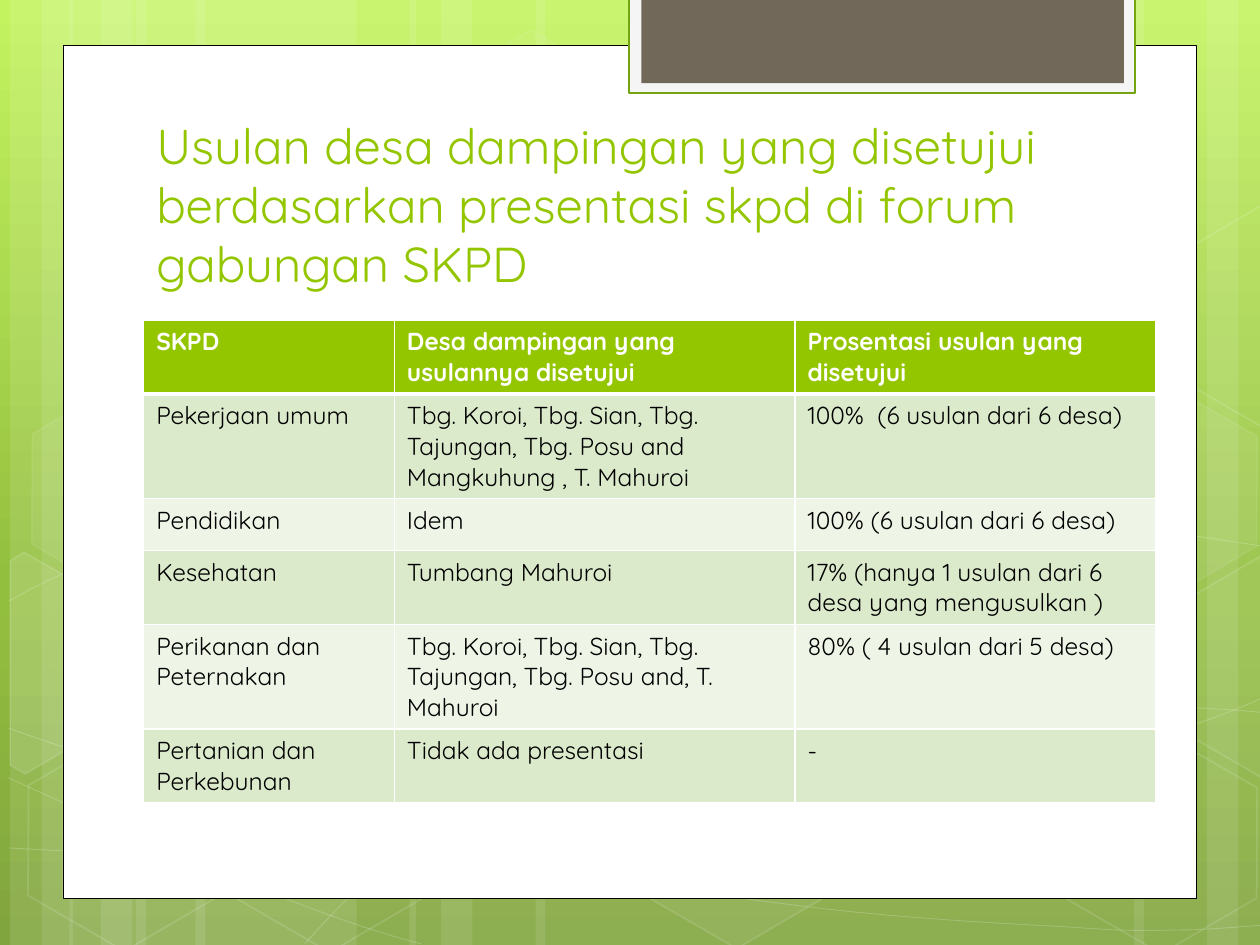
from math import cos, radians, sin
from lxml import etree
from pptx import Presentation
from pptx.dml.color import RGBColor
from pptx.enum.shapes import MSO_SHAPE
from pptx.enum.text import MSO_ANCHOR, MSO_AUTO_SIZE, PP_ALIGN
from pptx.oxml.ns import qn
from pptx.util import Inches, Pt

RECT, HEX = MSO_SHAPE.RECTANGLE, MSO_SHAPE.HEXAGON
LEFT, BOTTOM, FIXED = PP_ALIGN.LEFT, MSO_ANCHOR.BOTTOM, MSO_AUTO_SIZE.NONE
FONT = "Quicksand"
TILT = 30
WHITE = RGBColor(0xFF, 0xFF, 0xFF)
BLACK = RGBColor(0x00, 0x00, 0x00)
LIME = RGBColor(0x94, 0xC6, 0x00)
EDGE = RGBColor(0x74, 0xA5, 0x10)
SMOKE = RGBColor(0xF5, 0xF5, 0xF5)
BROWN = RGBColor(0x71, 0x68, 0x5A)
BANDS = (RGBColor(0xDC, 0xEA, 0xCC), RGBColor(0xEE, 0xF5, 0xE7))
SKY = ((0, RGBColor(0xC3, 0xF3, 0x5F)), (62, RGBColor(0x93, 0xBF, 0x3F)),
       (100, RGBColor(0x81, 0xA5, 0x3E)))

# Vertical light bars: left, width
BARS = [(1.08, 1.75), (0.08, 0.5), (0.33, 0.83), (1.55, 1.75), (0.55, 0.5),
        (0.8, 0.83), (7.33, 1.75), (9.58, 0.5), (9, 0.83), (4.25, 3.08),
        (3.25, 0.5), (3.5, 0.83)]

# Curves: start point, then two controls and an end for each Bezier
CURVES = [
    [(0.07, 6.73), (0.61, 6.76), (1.15, 6.79), (1.9, 6.78), (2.65, 6.77),
     (3.58, 6.75), (4.58, 6.65), (5.58, 6.55), (7, 6.36), (7.92, 6.17),
     (8.83, 5.98), (9.77, 5.68), (10.07, 5.51)],
    [(0.07, 4.77), (0.36, 4.61), (0.65, 4.46), (1.21, 4.31), (1.78, 4.16),
     (2.59, 3.94), (3.47, 3.87), (4.36, 3.8), (5.44, 3.79), (6.54, 3.87),
     (7.64, 3.95), (9.47, 4.26), (10.07, 4.34)],
    [(0.06, 6.17), (1.27, 6.72), (2.47, 7.27), (3.34, 7.49)],
    [(0.07, 5.78), (0.38, 5.89), (0.7, 6), (1.28, 6.16), (1.86, 6.31),
     (2.73, 6.56), (3.57, 6.73), (4.4, 6.9), (5.45, 7.08), (6.28, 7.18),
     (7.11, 7.29), (8, 7.33), (8.53, 7.36), (9.05, 7.4), (9.19, 7.38),
     (9.45, 7.38), (9.71, 7.37), (9.89, 7.35), (10.07, 7.34)],
    [(2.42, 7.49), (2.6, 7.29), (2.78, 7.09), (3.02, 6.91), (3.26, 6.73),
     (3.6, 6.53), (3.88, 6.39), (4.16, 6.25), (4.33, 6.19), (4.7, 6.09),
     (5.06, 5.99), (5.73, 5.85), (6.08, 5.78), (6.44, 5.71), (6.49, 5.71),
     (6.8, 5.69), (7.11, 5.66), (7.6, 5.63), (7.94, 5.62), (8.29, 5.61),
     (8.86, 5.62), (8.86, 5.62), (9.08, 5.62), (9.31, 5.62), (9.53, 5.62),
     (9.71, 5.63), (9.88, 5.64), (9.97, 5.65), (10.06, 5.66), (10.03, 5.65),
     (10.06, 5.66)],
]

# Hexagons: left, top, fill and line opacity in percent
CELLS = [(3.34, 0.36, 4, 8), (4.97, 5.89, 6, 12), (0.11, 5.91, 0, 12),
         (0.14, 3.12, 7, 8), (1.74, 5.92, 0, 12), (7.53, 4.53, 10, 12),
         (8.34, 5.93, 0, 12), (8.34, 3.14, 7, 8)]

# Hexagons cut by the slide edge: centre, corners, fill opacity
CUTS = [
    ((0.36, 5.35), [(0.08, 4.45), (0.19, 4.38), (0.96, 4.82), (0.95, 5.7),
                    (0.2, 6.14), (0.08, 6.07)], 10),
    ((9.85, 5.2), [(9.26, 4.85), (10.01, 4.41), (10.09, 4.46), (10.09, 6.13),
                   (10.02, 6.17), (9.26, 5.73)], 4),
    ((9.85, 2.41), [(9.26, 2.07), (10.01, 1.63), (10.1, 1.68), (10.09, 3.35),
                    (10.02, 3.39), (9.26, 2.95)], 0),
]

TITLE = ("Usulan desa dampingan yang disetujui berdasarkan presentasi skpd "
         "di forum gabungan SKPD")
ROWS = [
    ("SKPD", "Desa dampingan yang usulannya disetujui",
     "Prosentasi usulan yang disetujui"),
    ("Pekerjaan umum",
     "Tbg. Koroi, Tbg. Sian, Tbg. Tajungan, Tbg. Posu and Mangkuhung , T. Mahuroi",
     "100%  (6 usulan dari 6 desa)"),
    ("Pendidikan", "Idem", "100% (6 usulan dari 6 desa)"),
    ("Kesehatan", "Tumbang Mahuroi",
     "17% (hanya 1 usulan dari 6 desa yang mengusulkan )"),
    ("Perikanan dan Peternakan",
     "Tbg. Koroi, Tbg. Sian, Tbg. Tajungan, Tbg. Posu and, T. Mahuroi",
     "80% ( 4 usulan dari 5 desa)"),
    ("Pertanian dan Perkebunan", "Tidak ada presentasi", "-"),
]
COLS = (1.99, 3.18, 2.86)
RULES = (("a:lnL", 1), ("a:lnR", 1), ("a:lnT", 1), ("a:lnB", 3))


def write(frame, text, size=14, color=BLACK, bold=False):
    para = frame.paragraphs[0]
    para.alignment = LEFT
    run = para.add_run()
    run.text = text
    font = run.font
    font.name, font.size, font.bold = FONT, Pt(size), bold
    font.color.rgb = color


def paint(shape, fill=None, line=None, width=1, fade=100, glow=100):
    """Set fill and line; fade and glow are their opacities in percent."""
    shape.shadow.inherit = False
    for part, color in ((shape.fill, fill), (shape.line.fill, line)):
        if color is None:
            part.background()
        else:
            part.solid()
            part.fore_color.rgb = color
    if line is not None:
        shape.line.width = Pt(width)
    props = shape.element.spPr
    for route, part in (("a:solidFill/a:srgbClr", fade),
                        ("a:ln/a:solidFill/a:srgbClr", glow)):
        for color in props.xpath(route):
            if part < 100:
                etree.SubElement(color, qn("a:alpha"), val=str(part * 1000))


def block(slide, box, kind=RECT, **style):
    shape = slide.shapes.add_shape(kind, *map(Inches, box))
    paint(shape, **style)
    return shape


def trace(slide, points, close=False, **style):
    spots = [(Inches(x), Inches(y)) for x, y in points]
    pen = slide.shapes.build_freeform(*spots[0])
    pen.add_line_segments(spots[1:], close=close)
    shape = pen.convert_to_shape()
    paint(shape, **style)
    return shape


def bend(shape):
    """Join each three line steps into one cubic Bezier."""
    steps = shape.element.spPr.xpath(".//a:lnTo")
    for i in range(0, len(steps), 3):
        curve = etree.Element(qn("a:cubicBezTo"))
        steps[i].addprevious(curve)
        for step in steps[i:i + 3]:
            curve.append(step[0])
            step.getparent().remove(step)


def turn(points, mid, angle):
    c, s = cos(radians(angle)), sin(radians(angle))
    return [(mid[0] + (x - mid[0]) * c - (y - mid[1]) * s,
             mid[1] + (x - mid[0]) * s + (y - mid[1]) * c) for x, y in points]


def back(slide, box):
    # Gradient from top to bottom
    fill = slide.background.fill
    fill.gradient()
    grad = slide.element.find(".//" + qn("a:gradFill"))
    stops = grad.find(qn("a:gsLst"))
    for stop in list(stops):
        stops.remove(stop)
    for place, color in SKY:
        stop = etree.SubElement(stops, qn("a:gs"), pos=str(place * 1000))
        etree.SubElement(stop, qn("a:srgbClr"), val=str(color))
    grad.find(qn("a:lin")).set("ang", str(90 * 60000))
    # Light bars, curves and hexagons
    left, top, _, height = box
    for x, width in BARS:
        block(slide, (left + x, top, width, height), fill=WHITE, fade=10)
    for knots in CURVES:
        bend(trace(slide, knots, line=WHITE, width=0.5, glow=20))
    for x, y, fade, glow in CELLS:
        cell = block(slide, (left + x, top + y, 1.75, 1.52), HEX, line=WHITE,
                     fill=WHITE if fade else None, fade=fade, glow=glow)
        cell.adjustments[0], cell.adjustments[1] = 0.285, 1.155
        cell.rotation = TILT
    for mid, points, fade in CUTS:
        cut = trace(slide, turn(points, mid, -TILT), True, line=WHITE, glow=12,
                    fill=WHITE if fade else None, fade=fade)
        cut.rotation = TILT


def panel(slide, box):
    left, top, _, _ = box
    block(slide, box, fill=WHITE, line=BLACK, width=0.5)
    # Tab hanging from the top edge
    block(slide, (left + 4.49, top - 0.38, 4.02, 0.76), fill=SMOKE, line=EDGE, width=1.25)
    block(slide, (left + 4.59, top - 0.38, 3.83, 0.68), fill=BROWN)


def head(slide, box):
    title = slide.shapes.title
    slide.shapes.element.append(title.element)  # bring to front
    title.left, title.top, title.width, title.height = map(Inches, box)
    frame = title.text_frame
    frame.word_wrap, frame.auto_size = True, FIXED
    frame.vertical_anchor = BOTTOM
    write(frame, TITLE, size=28, color=LIME)


def rule(cell):
    """White borders, thicker at the bottom, placed before the fill."""
    props = cell.fill._xPr
    for i, (tag, width) in enumerate(RULES):
        line = etree.Element(qn(tag), w=str(Pt(width)))
        solid = etree.SubElement(line, qn("a:solidFill"))
        etree.SubElement(solid, qn("a:srgbClr"), val=str(WHITE))
        props.insert(i, line)


def grid(slide, box):
    table = slide.shapes.add_table(len(ROWS), len(COLS), *map(Inches, box)).table
    for col, width in zip(table.columns, COLS):
        col.width = Inches(width)
    for r, texts in enumerate(ROWS):
        table.rows[r].height = Inches(0.41)
        for c, text in enumerate(texts):
            cell = table.cell(r, c)
            cell.fill.solid()
            cell.fill.fore_color.rgb = BANDS[(r - 1) % 2] if r else LIME
            write(cell.text_frame, text, bold=r == 0, color=BLACK if r else WHITE)
            if r == 0:
                rule(cell)


def main():
    deck = Presentation()
    deck.slide_width, deck.slide_height = Inches(10), Inches(7.5)
    slide = deck.slides.add_slide(deck.slide_layouts[5])
    back(slide, (0, 0, 10, 7.5))
    panel(slide, (0.5, 0.36, 9, 6.77))
    head(slide, (1.14, 1.12, 7.68, 1.25))
    grid(slide, (1.14, 2.54, 8.03, 2.46))
    deck.save("out.pptx")


if __name__ == "__main__":
    main()
